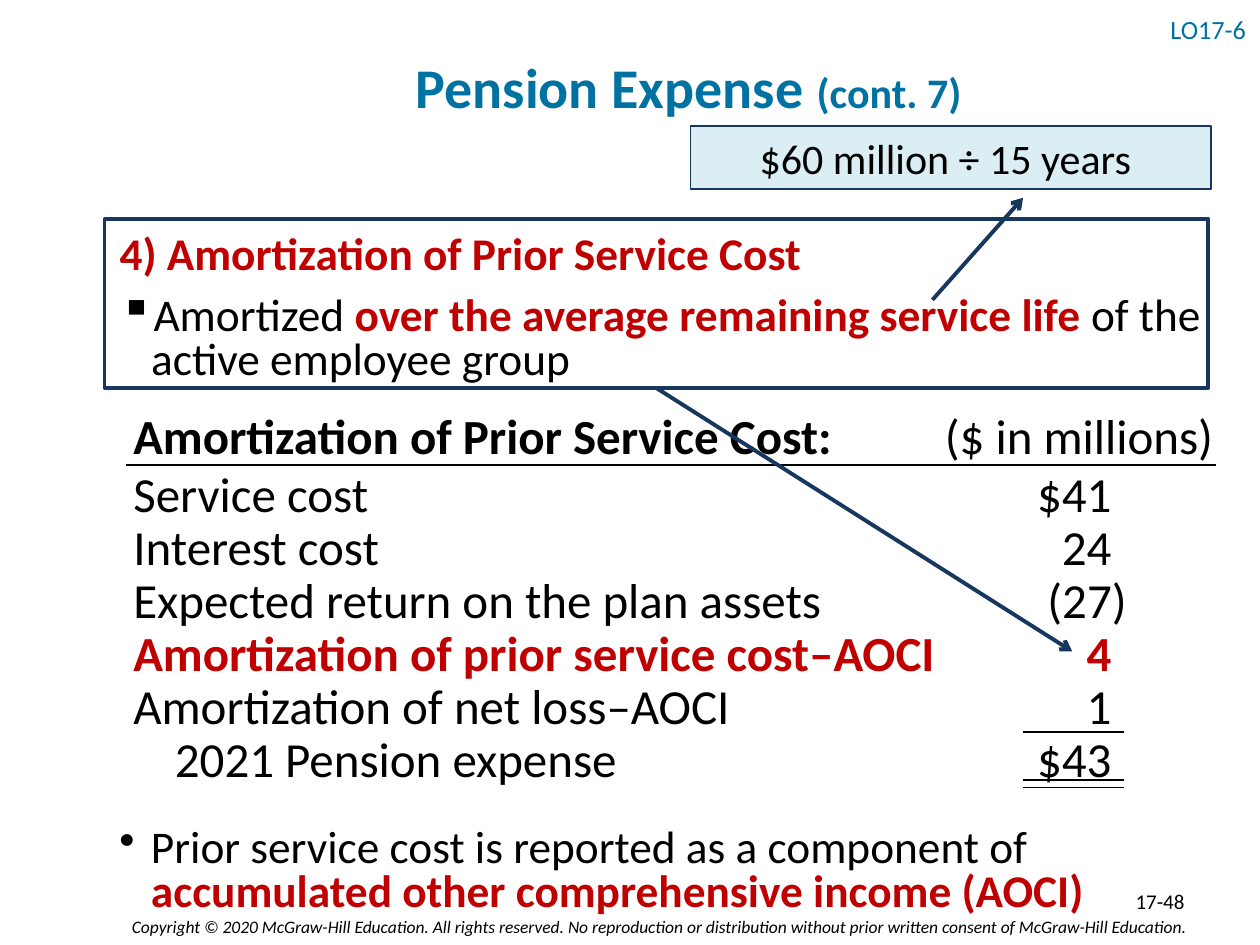
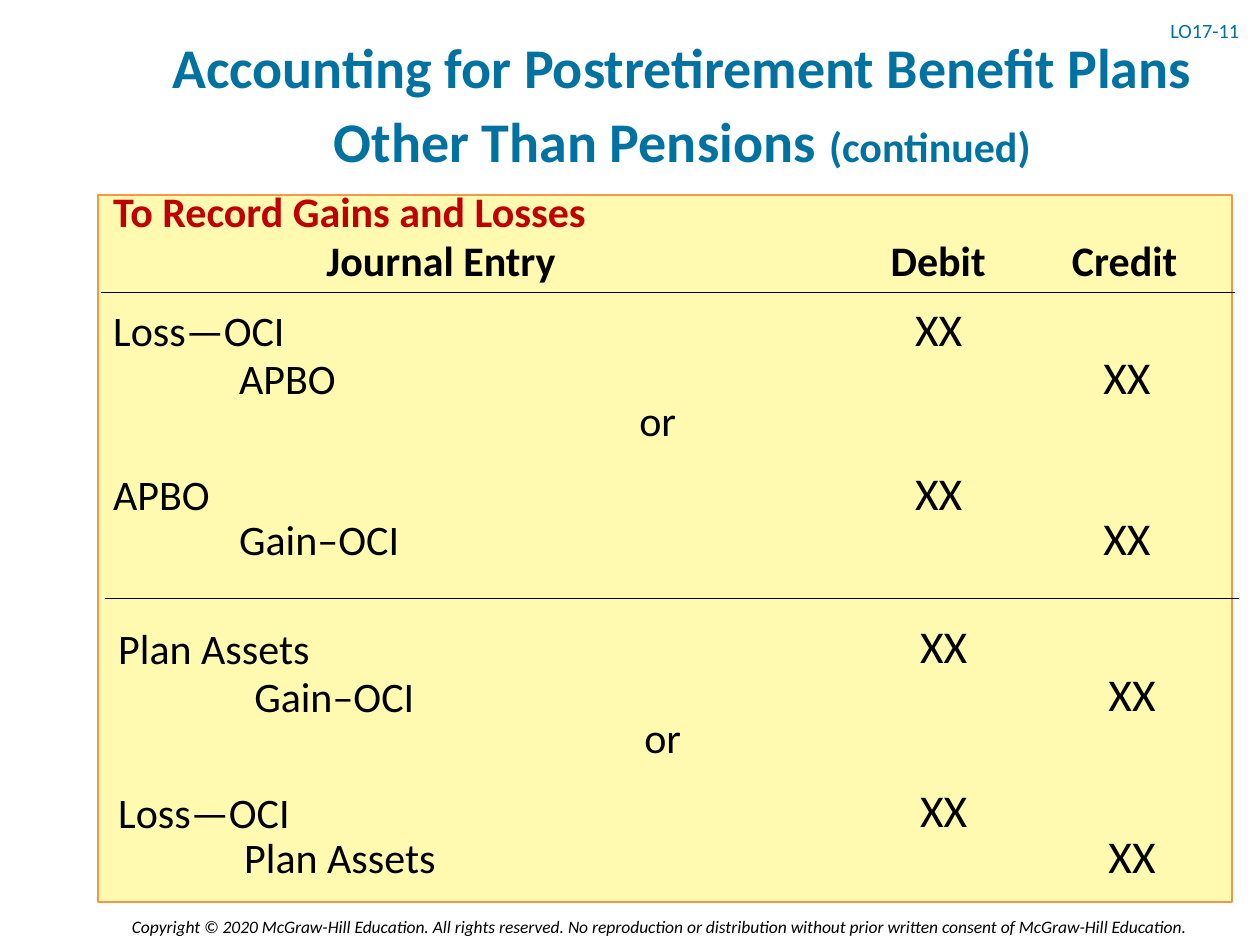
from dataclasses import dataclass
from pptx import Presentation
from pptx.dml.color import RGBColor as RGB
from pptx.enum.shapes import MSO_CONNECTOR as Conn, MSO_SHAPE as Kind
from pptx.enum.text import MSO_ANCHOR as Anchor, PP_ALIGN as Align
from pptx.oxml.ns import qn
from pptx.util import Inches, Pt
from lxml.etree import SubElement as Sub


@dataclass(frozen=True)
class Theme:
    font: str = "Calibri"
    ink: str = "000000"
    blue: str = "0072A2"
    red: str = "C00000"
    navy: str = "17375E"
    pale: str = "DBEEF4"
    cream: str = "FFFAB0"
    amber: str = "F79646"
    title: float = 32
    sheet: float = 28
    mark: float = 26
    point: float = 25.9
    body: float = 24
    page: float = 12
    foot: float = 10


T = Theme()
RED = {"color": T.red, "bold": True}
RIGHT = {"alignment": Align.RIGHT}
MID = {"alignment": Align.CENTER}
LEGAL = ("Copyright © 2020 McGraw-Hill Education. All rights reserved. No reproduction "
         "or distribution without prior written consent of McGraw-Hill Education.")


# Shared drawing helpers
def apply(item, values):
    for name, value in values.items():
        setattr(item, name, value)


def style(run, size, color=T.ink, **more):
    apply(run.font, {"name": T.font, "size": Pt(size), **more})
    run.font.color.rgb = RGB.from_string(color)


def fill_para(para, runs, size, look=None, bullet=None):
    """Each run is a string or a (string, format) pair; a newline breaks the line."""
    apply(para, look or {})
    if bullet:
        props = para._p.get_or_add_pPr()
        props.set("marL", str(Inches(0.25)))
        props.set("indent", str(-Inches(0.25)))
        Sub(props, qn("a:buChar")).set("char", bullet)
    for part in runs:
        words, form = (part, {}) if isinstance(part, str) else part
        for n, line in enumerate(words.split("\n")):
            if n:
                para.add_line_break()
            run = para.add_run()
            run.text = line
            style(run, size, **form) if "size" not in form else style(run, **form)


def text(slide, box, runs, size, look=None, bullet=None, **frame):
    area = slide.shapes.add_textbox(*map(Inches, box)).text_frame
    apply(area, {"word_wrap": True, **frame})
    fill_para(area.paragraphs[0], runs, size, look, bullet)


def rect(slide, box, line, width, fill=None):
    shape = slide.shapes.add_shape(Kind.RECTANGLE, *map(Inches, box))
    shape.shadow.inherit = False
    if fill:
        shape.fill.solid()
        shape.fill.fore_color.rgb = RGB.from_string(fill)
    else:
        shape.fill.background()
    shape.line.color.rgb = RGB.from_string(line)
    shape.line.width = Pt(width)
    return shape.text_frame


def rule(slide, start, end, color=T.ink, width=1.0, arrow=False):
    link = slide.shapes.add_connector(Conn.STRAIGHT, *map(Inches, start + end))
    link.line.color.rgb = RGB.from_string(color)
    link.line.width = Pt(width)
    if arrow:
        Sub(link.line._get_or_add_ln(), qn("a:tailEnd")).set("type", "arrow")
    Sub(link._element.spPr, qn("a:effectLst"))


# Title, learning objective and copyright line
def base(deck, box, title, suffix, goal, size):
    slide = deck.slides.add_slide(deck.slide_layouts[6])
    text(slide, (0.45, 7.22, 9.06, 0.27), [(LEGAL, {"italic": True})], T.foot, RIGHT)
    head = {"color": T.blue, "bold": True}
    text(slide, box, [(title + " ", head), (suffix, {**head, "size": T.body})], T.title,
         {**MID, "line_spacing": 1.1}, vertical_anchor=Anchor.MIDDLE)
    text(slide, (9.19, 0.05, 0.81, 0.4), [(goal, {"color": T.blue})], size,
         {"line_spacing": 0.9}, vertical_anchor=Anchor.MIDDLE, margin_right=0)
    return slide


# Framed statement with one bullet
def claim(slide, box):
    area = rect(slide, box, T.navy, 2.25)
    apply(area, {"word_wrap": True, "vertical_anchor": Anchor.TOP,
                 "margin_left": Inches(0.12), "margin_right": Inches(0.06),
                 "margin_top": Inches(0.13)})
    look = {"alignment": Align.LEFT, "line_spacing": 0.8}
    fill_para(area.paragraphs[0], [("4) Amortization of Prior Service Cost", RED)],
              T.point, look)
    fill_para(area.add_paragraph(),
              ["Amortized ", ("over the average remaining service life ", RED),
               "of the active employee group"],
              T.point, {**look, "space_before": Pt(10)}, "▪")


# Expense schedule: labels to the left, amounts to the right
def sheet(slide, left, top):
    rows = [("Service cost", "$41"), ("Interest cost", "24"),
            ("Expected return on the plan assets", "(27)"),
            ("Amortization of prior service cost–AOCI", "4"),
            ("Amortization of net loss–AOCI", "1"),
            ("2021 Pension expense", "$43")]
    text(slide, (left, top, 6.71, 0.57),
         [("Amortization of Prior Service Cost:", {"bold": True})], T.sheet)
    text(slide, (left + 6.44, top, 2.45, 0.57), ["($ in millions)"], T.sheet)
    for n, (label, sum_) in enumerate(rows):
        y = top + 0.46 + 0.42 * n
        form = RED if n == 3 else {}
        shift = 0.33 if n == len(rows) - 1 else 0
        hang = 0.12 if sum_.endswith(")") else 0
        text(slide, (left + shift, y, 6.71, 0.57), [(label, form)], T.sheet)
        text(slide, (left + 6.76 + hang, y, 1.2, 0.57), [(sum_, form)], T.sheet, RIGHT)
    rule(slide, (left + 0.04, top + 0.52), (left + 8.69, top + 0.52))
    for drop in (2.64, 3.02, 3.08):
        rule(slide, (left + 7.16, top + drop), (left + 7.96, top + drop))


def expense(deck):
    slide = base(deck, (0.88, 0, 9.17, 1.31), "Pension Expense", "(cont. 7)", "LO17-6", 15)
    sheet(slide, 0.96, 3.17)
    # Callout with the computation
    area = rect(slide, (5.48, 1, 4.13, 0.5), T.navy, 1, T.pale)
    apply(area, {"margin_right": Inches(0.18), "word_wrap": True})
    fill_para(area.paragraphs[0], ["$60 million ÷ 15 years"], T.body, MID)
    claim(slide, (0.83, 1.74, 8.76, 1.34))
    # Arrows from the statement to the callout and the amount
    for start, end in (((7.4, 2.38), (8.12, 1.57)), ((5.21, 3.08), (8.51, 5.17))):
        rule(slide, start, end, T.navy, 2.25, True)
    # Closing note and page number
    text(slide, (0.85, 6.53, 8.76, 0.85),
         ["Prior service cost is reported as a component of ",
          ("accumulated other comprehensive income (AOCI)", RED)],
         T.point, {"line_spacing": 0.8}, "•")
    text(slide, (7.17, 6.95, 2.33, 0.4), ["17-48"], T.page, RIGHT,
         vertical_anchor=Anchor.MIDDLE)


# Two alternative entries, each a debit line above an indented credit line
def entry(slide, left, top, pairs, indent=1.0):
    drops = ((0, 0.38), (1.3, 1.66))
    insets = (indent, 1.0)
    for (debit, credit), (high, low), inset in zip(pairs, drops, insets):
        text(slide, (left, top + high, 3.5, 0.44), [debit], T.body)
        text(slide, (left + inset, top + low, 3, 0.44), [credit], T.body)
        for x, width, y in ((6.01, 1.28, high), (7.56, 1.17, low)):
            text(slide, (left + x, top + y - 0.03, width, 0.44), ["XX"], T.mark, MID)
    text(slide, (left + 4.14, top + 0.71, 0.56, 0.54), ["or"], T.body, MID)


def journal(deck):
    slide = base(deck, (0.83, 0, 9.17, 1.58),
                 "Accounting for Postretirement Benefit Plans\nOther Than Pensions",
                 "(continued)", "LO17-11", 11.6)
    rect(slide, (0.78, 1.55, 9, 5.61), T.amber, 1, T.cream)
    # Headings
    text(slide, (0.8, 1.42, 4.46, 0.5), [("To Record Gains and Losses", RED)], T.body)
    for x, width, name in ((0.94, 5.12, "Journal Entry"), (6.74, 1.41, "Debit"),
                           (8.22, 1.41, "Credit")):
        text(slide, (x, 1.81, width, 0.5), [(name, {"bold": True})], T.body, MID)
    # Entries, each below its rule
    entry(slide, 0.8, 2.37, [("Loss—OCI", "APBO"), ("APBO", "Gain–OCI")])
    entry(slide, 0.84, 4.89, [("Plan Assets", "Gain–OCI"), ("Loss—OCI", "Plan Assets")], 1.08)
    for x, y in ((0.8, 2.32), (0.83, 4.75)):
        rule(slide, (x, y), (x + 9, y), width=0.5)


def main():
    deck = Presentation()
    apply(deck, {"slide_width": Inches(10), "slide_height": Inches(7.5)})
    expense(deck)
    journal(deck)
    deck.save("out.pptx")


if __name__ == "__main__":
    main()
